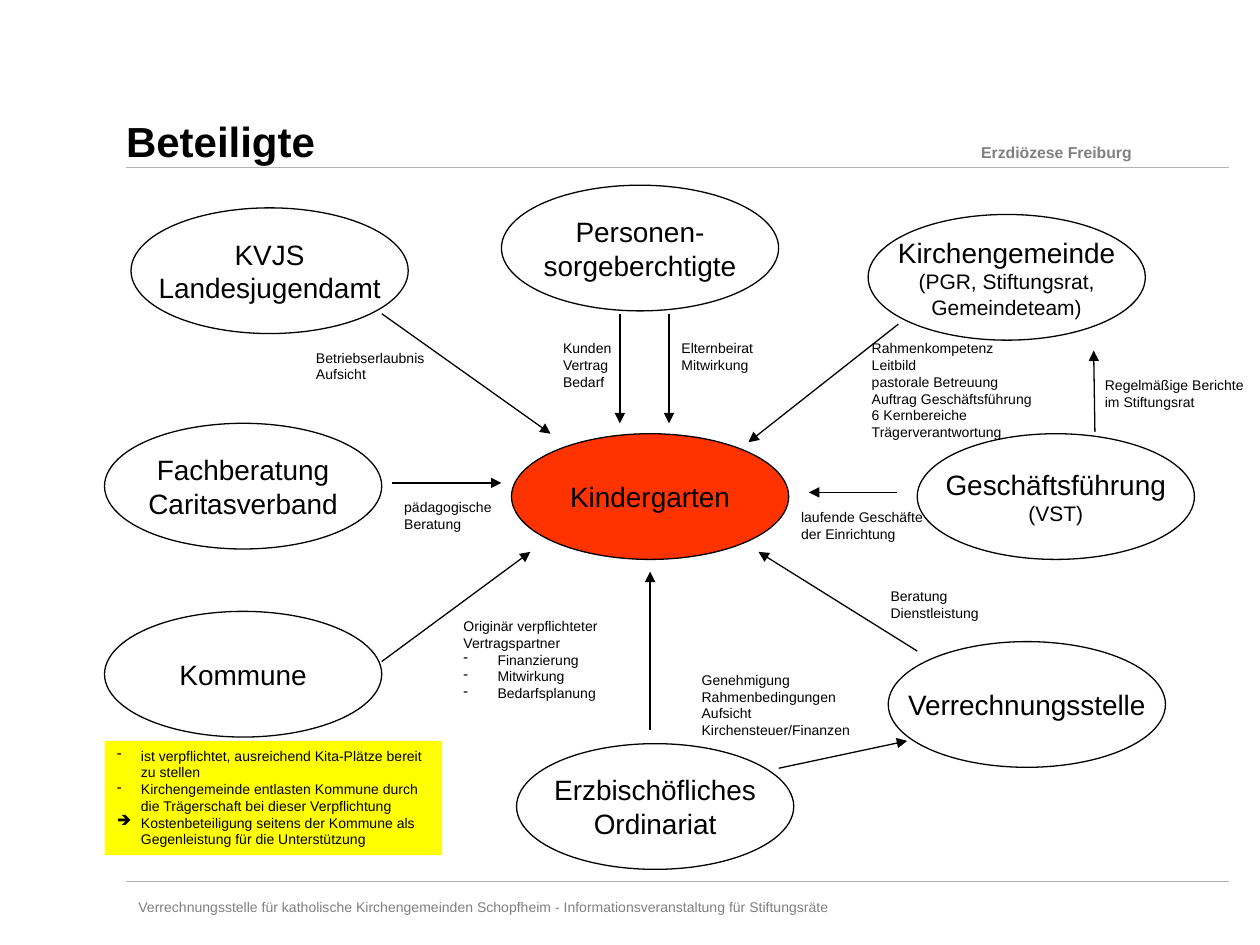
from dataclasses import dataclass
from lxml import etree
from pptx import Presentation
from pptx import util as u
from pptx.dml.color import RGBColor
from pptx.enum import shapes, text
from pptx.oxml.ns import qn


@dataclass(frozen=True)
class Theme:
    font: str = "Arial"
    ink: str = "000000"
    grey: str = "808080"
    rule: str = "B2B2B2"
    center: str = "FF3300"
    note: str = "FFFF00"
    title: int = 24
    node: int = 16
    detail: int = 12
    header: int = 9
    label: int = 8
    line: float = 0.75


THEME = Theme()
WIDTH, HEIGHT = 10, 7.5
NODE_SIZE = (22, 13.3)
LINE_SHARE, PADDING_SHARE = 1.8, 1.33

TITLE = "Beteiligte"
HEADER = "Erzdiözese Freiburg"
FOOTER = ("Verrechnungsstelle für katholische Kirchengemeinden Schopfheim"
          " - Informationsveranstaltung für Stiftungsräte")
RULES = [93.3, 17.7]

# Positions are percentages of the slide's width and height.
NODES = [
    (40.6, 45.9, ["Kindergarten"], [], THEME.center),
    (41, 78.7, ["Erzbischöfliches", "Ordinariat"], [], None),
    (8.3, 64.7, ["Kommune"], [], None),
    (10.4, 22, ["KVJS", "Landesjugendamt"], [], None),
    (70.5, 67.9, ["Verrechnungsstelle"], [], None),
    (72.8, 45.9, ["Geschäftsführung"], ["(VST)"], None),
    (68.9, 22.7, ["Kirchengemeinde"], ["(PGR, Stiftungsrat,", "Gemeindeteam)"], None),
    (39.8, 19.6, ["Personen-", "sorgeberchtigte"], [], None),
    (8.3, 44.8, ["Fachberatung", "Caritasverband"], [], None),
]

ARROWS = [
    ((49.2, 33.2), (49.2, 44.8)),
    ((53.1, 33.2), (53.1, 44.8)),
    ((71.2, 52.1), (64.2, 52.1)),
    ((72.8, 68.9), (60.2, 58.4)),
    ((71.3, 34.3), (59.4, 46.8)),
    ((51.6, 77.3), (51.6, 60.5)),
    ((30.3, 70), (42.1, 58.4)),
    ((31.1, 51.1), (39.8, 51.1)),
    ((30.3, 33.2), (43.7, 45.9)),
    ((86.9, 45.7), (86.8, 37.1)),
    ((61.8, 81.3), (72, 78.4)),
]

LABELS = [
    (68.2, 35.3, 14.9, ["Rahmenkompetenz", "Leitbild", "pastorale Betreuung",
                        "Auftrag Geschäftsführung", "6 Kernbereiche",
                        "Trägerverantwortung"], []),
    (62.6, 53.2, 11.7, ["laufende Geschäfte", "der Einrichtung"], []),
    (69.7, 61.5, 9, ["Beratung", "Dienstleistung"], []),
    (24.1, 36.3, 10.6, ["Betriebserlaubnis", "Aufsicht"], []),
    (35.8, 64.7, 12.8, ["Originär verpflichteter", "Vertragspartner"],
     ["Finanzierung", "Mitwirkung", "Bedarfsplanung"]),
    (31.1, 52.1, 9, ["pädagogische", "Beratung"], []),
    (54.7, 70.4, 13.9, ["Genehmigung", "Rahmenbedingungen", "Aufsicht",
                        "Kirchensteuer/Finanzen"], []),
    (43.7, 35.3, 5.9, ["Kunden", "Vertrag", "Bedarf"], []),
    (53.1, 35.3, 7.7, ["Elternbeirat", "Mitwirkung"], []),
    (86.7, 39.2, 13.5, ["Regelmäßige Berichte", "im Stiftungsrat"], []),
]

NOTE = [
    ("-", "ist verpflichtet, ausreichend Kita-Plätze bereit zu stellen"),
    ("-", "Kirchengemeinde entlasten Kommune durch die Trägerschaft bei dieser Verpflichtung"),
    ("➔", "Kostenbeteiligung seitens der Kommune als Gegenleistung für die Unterstützung"),
]


def across(share):
    return u.Inches(WIDTH * share / 100)


def down(share):
    return u.Inches(HEIGHT * share / 100)


def area(left, top, width, height):
    return across(left), down(top), across(width), down(height)


def color(value):
    return RGBColor.from_string(value)


def write(frame, lines, align=text.PP_ALIGN.LEFT, tint=THEME.ink, bold=False,
          wrap=True, anchor=text.MSO_ANCHOR.TOP):
    """Each line is (words, size, bullet, indent in inches)."""
    frame.word_wrap = wrap
    frame.auto_size = text.MSO_AUTO_SIZE.NONE
    frame.vertical_anchor = anchor
    for index, (words, size, bullet, indent) in enumerate(lines):
        para = frame.add_paragraph() if index else frame.paragraphs[0]
        para.alignment = align
        if bullet:
            props = para._p.get_or_add_pPr()
            props.set("marL", str(u.Inches(indent)))
            props.set("indent", str(-u.Inches(indent)))
            etree.SubElement(props, qn("a:buChar")).set("char", bullet)
        span = para.add_run()
        span.text = words
        span.font.name = THEME.font
        span.font.size = u.Pt(size)
        span.font.bold = bold
        span.font.color.rgb = color(tint)


def plain(lines, size):
    return [(words, size, None, 0) for words in lines]


def add_line(page, start, end, tint, arrow=False):
    line = page.shapes.add_connector(
        shapes.MSO_CONNECTOR.STRAIGHT,
        across(start[0]), down(start[1]), across(end[0]), down(end[1]))
    line.line.color.rgb = color(tint)
    line.line.width = u.Pt(THEME.line)
    if arrow:
        tail = etree.SubElement(line.line._get_or_add_ln(), qn("a:tailEnd"))
        tail.set("type", "triangle")
    etree.SubElement(line._element.spPr, qn("a:effectLst"))


def add_filled(page, kind, place, fill, outline):
    shape = page.shapes.add_shape(kind, *place)
    shape.shadow.inherit = False
    if fill:
        shape.fill.solid()
        shape.fill.fore_color.rgb = color(fill)
    else:
        shape.fill.background()
    if outline:
        shape.line.color.rgb = color(outline)
        shape.line.width = u.Pt(THEME.line)
    else:
        shape.line.fill.background()
    return shape


def main():
    deck = Presentation()
    deck.slide_width, deck.slide_height = u.Inches(WIDTH), u.Inches(HEIGHT)
    page = deck.slides.add_slide(deck.slide_layouts[5])

    for height in RULES:
        add_line(page, (10, height), (97.5, height), THEME.rule)
    title = page.shapes.title
    title.left, title.top, title.width, title.height = area(9, 11.2, 61.4, 5.1)
    write(title.text_frame, plain([TITLE], THEME.title), bold=True)
    title.text_frame.margin_top = u.Inches(0.08)
    header = page.shapes.add_textbox(*area(75, 14.4, 15.8, 3.3))
    write(header.text_frame, plain([HEADER], THEME.header),
          text.PP_ALIGN.RIGHT, THEME.grey, bold=True)

    for left, top, names, details, fill in NODES:
        node = add_filled(page, shapes.MSO_SHAPE.OVAL,
                          area(left, top, *NODE_SIZE), fill, THEME.ink)
        write(node.text_frame,
              plain(names, THEME.node) + plain(details, THEME.detail),
              text.PP_ALIGN.CENTER, wrap=False, anchor=text.MSO_ANCHOR.MIDDLE)

    for start, end in ARROWS:
        add_line(page, start, end, THEME.ink, arrow=True)

    for left, top, width, lines, items in LABELS:
        height = PADDING_SHARE + LINE_SHARE * len(lines + items)
        label = page.shapes.add_textbox(*area(left, top, width, height))
        bullets = [(item, THEME.label, "-", 0.27) for item in items]
        write(label.text_frame, plain(lines, THEME.label) + bullets, wrap=False)

    note = add_filled(page, shapes.MSO_SHAPE.RECTANGLE,
                      area(8.3, 78.4, 26.8, 12.1), THEME.note, None)
    write(note.text_frame,
          [(words, THEME.label, bullet, 0.19) for bullet, words in NOTE])

    footer = page.shapes.add_textbox(*area(10, 94.4, 65.2, 3.3))
    write(footer.text_frame, plain([FOOTER], THEME.label), tint=THEME.grey)
    deck.save("out.pptx")


if __name__ == "__main__":
    main()
